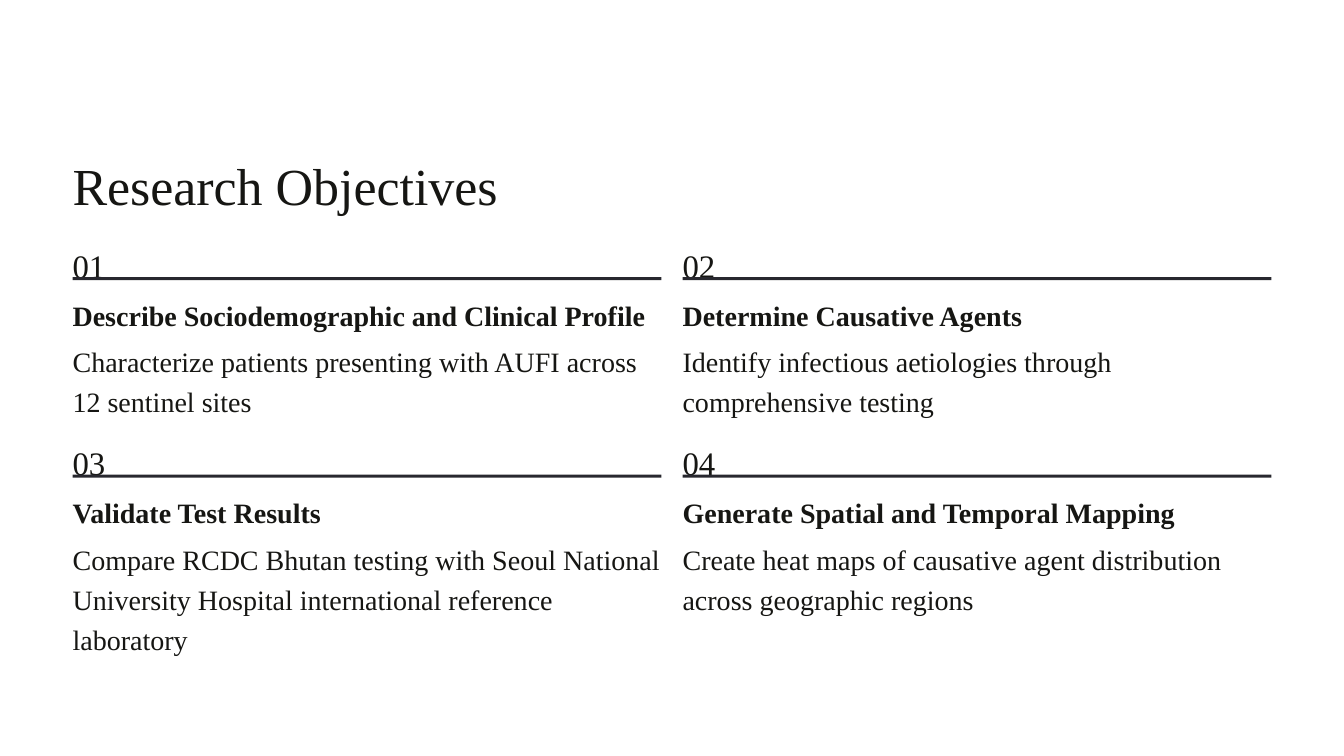
from pptx import Presentation
from pptx.dml.color import RGBColor
from pptx.enum.shapes import MSO_SHAPE
from pptx.util import Pt

RECTANGLE = MSO_SHAPE.RECTANGLE

# Content: heading, heading width in px, description
TITLE = "Research Objectives"
OBJECTIVES = [
    ("Describe Sociodemographic and Clinical Profile", 576,
     "Characterize patients presenting with AUFI across 12 sentinel sites"),
    ("Determine Causative Agents", 347,
     "Identify infectious aetiologies through comprehensive testing"),
    ("Validate Test Results", 258,
     "Compare RCDC Bhutan testing with Seoul National University Hospital "
     "international reference laboratory"),
    ("Generate Spatial and Temporal Mapping", 500,
     "Create heat maps of causative agent distribution across geographic regions"),
]

# Formats
INK = RGBColor(0x16, 0x16, 0x13)
RULE = RGBColor(0x28, 0x28, 0x2F)
FONT = "Times New Roman"
TITLE_FORMAT = {"size": Pt(37.1)}
NUMBER_FORMAT = {"size": Pt(23.4)}
HEADING_FORMAT = {"size": Pt(20), "bold": True}
BODY_FORMAT = {"size": Pt(20)}

# Layout in px, 100 px to the inch
EMU_PER_PX = 9144
LEFT, TOP = 72, 243
COLUMN_WIDTH, COLUMN_STEP, ROW_STEP = 584, 605, 196
COLUMNS = 2


def px(*lengths):
    return [length * EMU_PER_PX for length in lengths]


def add_text(page, text, place, font_format, line_height, wrap=False):
    box = page.shapes.add_textbox(*px(*place))
    frame = box.text_frame
    frame.word_wrap = wrap
    for side in ("left", "top", "right", "bottom"):
        setattr(frame, f"margin_{side}", 0)
    para = frame.paragraphs[0]
    para.line_spacing = Pt(line_height)
    span = para.add_run()
    span.text = text
    span.font.color.rgb = INK
    for name, value in {"name": FONT, **font_format}.items():
        setattr(span.font, name, value)


def add_rule(page, place):
    rule = page.shapes.add_shape(RECTANGLE, *px(*place))
    rule.shadow.inherit = False
    rule.fill.solid()
    rule.fill.fore_color.rgb = RULE
    rule.line.fill.background()


def add_objective(page, index, heading, heading_width, body):
    row, column = divmod(index, COLUMNS)
    left = LEFT + column * COLUMN_STEP
    top = TOP + row * ROW_STEP
    add_text(page, f"{index + 1:02}", (left, top, 35, 26), NUMBER_FORMAT, 28.5)
    add_rule(page, (left, top + 32, COLUMN_WIDTH, 3))
    add_text(page, heading, (left, top + 48, heading_width, 32), HEADING_FORMAT, 27.5)
    add_text(page, body, (left, top + 93, COLUMN_WIDTH, 66), BODY_FORMAT, 28.5, wrap=True)


def main():
    deck = Presentation()
    deck.slide_width, deck.slide_height = px(1333, 750)
    page = deck.slides.add_slide(deck.slide_layouts[6])

    # Title, then the grid of objectives
    add_text(page, TITLE, (LEFT, 137, 517, 65), TITLE_FORMAT, 55.5)
    for index, objective in enumerate(OBJECTIVES):
        add_objective(page, index, *objective)

    deck.save("out.pptx")


if __name__ == "__main__":
    main()
